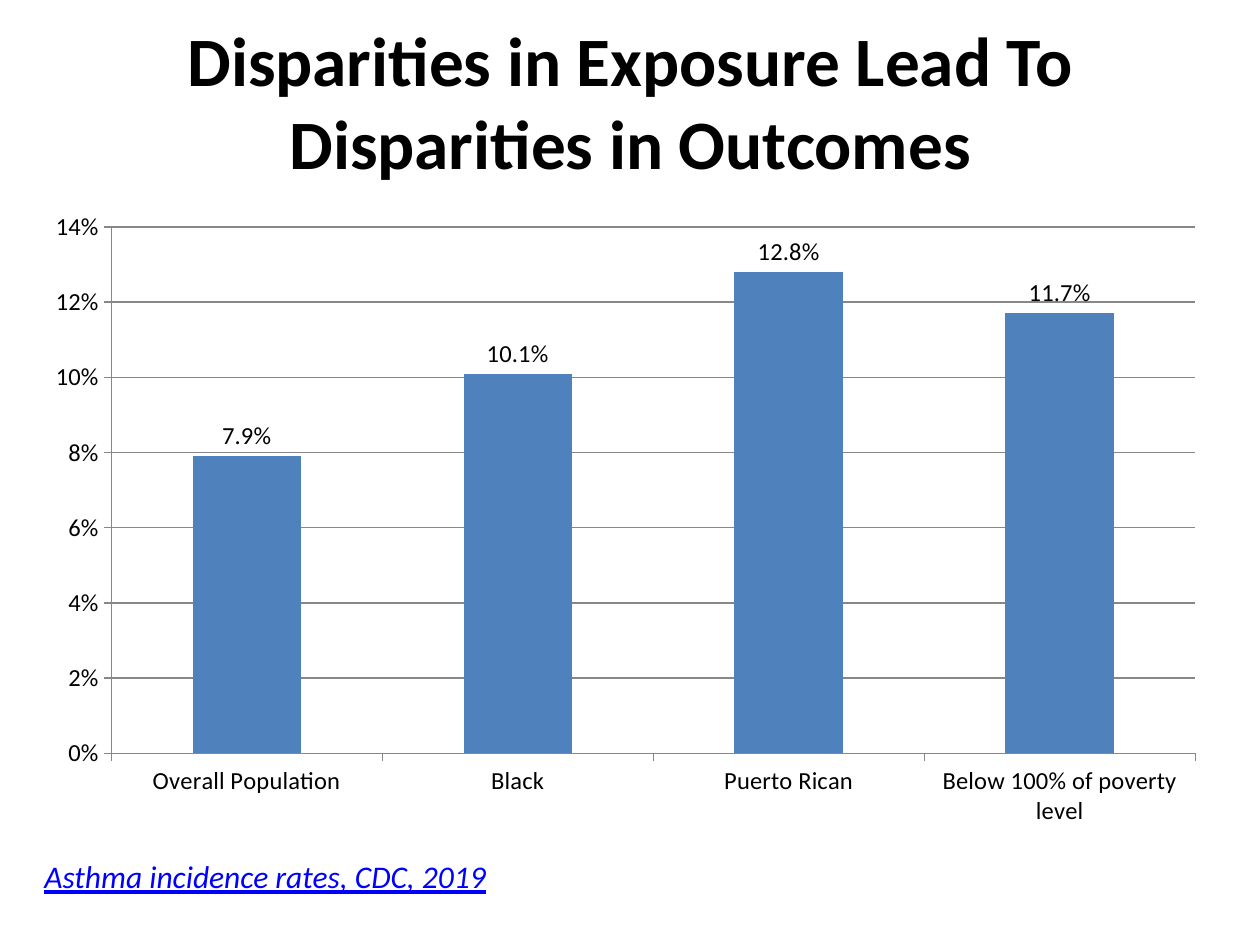
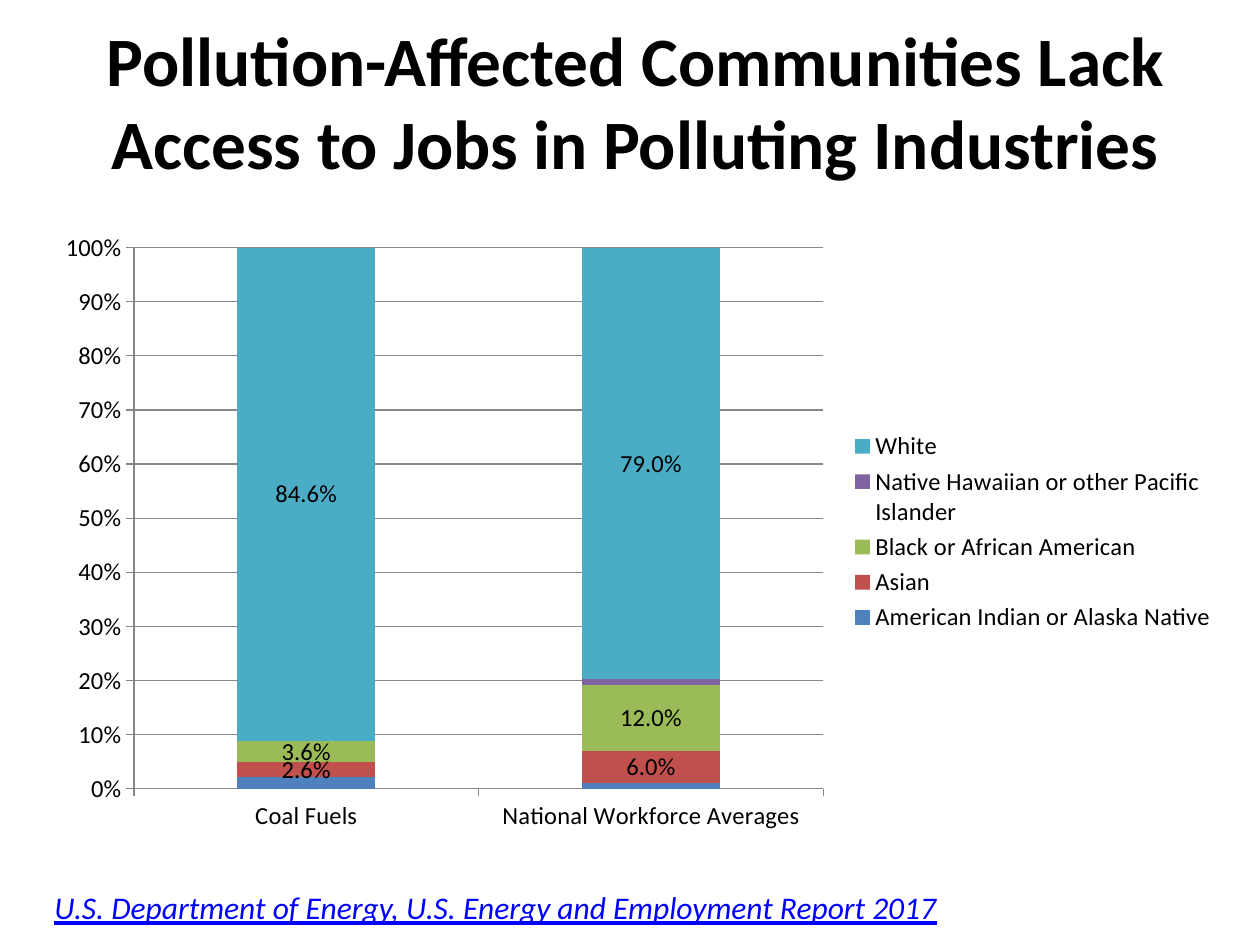
from pptx import Presentation
from pptx.chart.data import CategoryChartData
from pptx.dml.color import RGBColor
from pptx.enum.chart import XL_CHART_TYPE, XL_LABEL_POSITION, XL_LEGEND_POSITION, XL_TICK_MARK
from pptx.enum.text import MSO_ANCHOR, MSO_AUTO_SIZE, PP_ALIGN
from pptx.util import Emu, Pt

PX_PER_INCH = 126
FONT = "Calibri"
BLACK = RGBColor(0x00, 0x00, 0x00)
LINK_BLUE = RGBColor(0x00, 0x00, 0xFF)
GRID_GREY = RGBColor(0x87, 0x87, 0x87)
BLUE = RGBColor(0x4F, 0x81, 0xBD)
RED = RGBColor(0xC0, 0x50, 0x4D)
GREEN = RGBColor(0x9B, 0xBB, 0x59)
PURPLE = RGBColor(0x80, 0x64, 0xA2)
TEAL = RGBColor(0x4B, 0xAC, 0xC6)


def px(length):
    """Turn whole pixels into EMU."""
    return Emu(round(length * 914400 / PX_PER_INCH))


def style_font(font, size, color=BLACK, bold=False, italic=False):
    """Apply the shared typeface with a size, colour and weight."""
    font.name = FONT
    font.size = Pt(size)
    font.color.rgb = color
    font.bold = bold
    font.italic = italic


def set_title(page, box, text):
    """Place and format the title placeholder in the box."""
    title = page.shapes.title
    title.left, title.top, title.width, title.height = map(px, box)
    frame = title.text_frame
    frame.word_wrap = True
    frame.auto_size = MSO_AUTO_SIZE.NONE
    frame.vertical_anchor = MSO_ANCHOR.MIDDLE
    para = frame.paragraphs[0]
    para.alignment = PP_ALIGN.CENTER
    span = para.add_run()
    span.text = text
    style_font(span.font, 39.6, bold=True)


def add_source(page, box, text):
    """Add the underlined source line in the box."""
    frame = page.shapes.add_textbox(*map(px, box)).text_frame
    frame.word_wrap = True
    frame.auto_size = MSO_AUTO_SIZE.SHAPE_TO_FIT_TEXT
    span = frame.paragraphs[0].add_run()
    span.text = text
    style_font(span.font, 18, LINK_BLUE, italic=True)
    span.font.underline = True


def style_axis(axis):
    """Give an axis its text, line and tick marks."""
    style_font(axis.tick_labels.font, 14)
    axis.format.line.color.rgb = GRID_GREY
    axis.major_tick_mark = XL_TICK_MARK.OUTSIDE
    axis.minor_tick_mark = XL_TICK_MARK.NONE


def add_labels(series, position):
    """Show the values of a series as percentages."""
    labels = series.data_labels
    labels.show_value = True
    labels.number_format = "0.0%"
    labels.number_format_is_linked = False
    labels.position = position
    style_font(labels.font, 14)


def add_column_chart(page, box, kind, categories, groups, top, step, label_position):
    """Add a column chart of (name, values, colour, labelled) groups in the box."""
    data = CategoryChartData(number_format="0.0%")
    data.categories = categories
    for name, values, _, _ in groups:
        data.add_series(name, values)
    chart = page.shapes.add_chart(kind, *map(px, box), data).chart
    style_font(chart.font, 10)
    chart.has_title = False
    chart.has_legend = False
    style_axis(chart.category_axis)
    scale = chart.value_axis
    style_axis(scale)
    scale.minimum_scale, scale.maximum_scale, scale.major_unit = 0, top, step
    scale.tick_labels.number_format = "0%"
    scale.tick_labels.number_format_is_linked = False
    scale.has_major_gridlines = True
    scale.major_gridlines.format.line.color.rgb = GRID_GREY
    plot = chart.plots[0]
    plot.gap_width = 150
    plot.vary_by_categories = False
    for series, (_, _, color, labelled) in zip(plot.series, groups):
        series.format.fill.solid()
        series.format.fill.fore_color.rgb = color
        if labelled:
            add_labels(series, label_position)
    return chart


def build_outcomes(page):
    """Build the slide on asthma rates by group."""
    set_title(page, (32, 21, 1197, 158), "Disparities in Exposure Lead To Disparities in Outcomes")
    categories = ["Overall Population", "Black", "Puerto Rican", "Below 100% of poverty level"]
    rates = [("Series 1", (0.079, 0.101, 0.128, 0.117), BLUE, True)]
    add_column_chart(page, (32, 199, 1187, 640), XL_CHART_TYPE.COLUMN_CLUSTERED, categories,
                     rates, 0.14, 0.02, XL_LABEL_POSITION.OUTSIDE_END)
    add_source(page, (32, 851, 1207, 50), "Asthma incidence rates, CDC, 2019")


def build_jobs(page):
    """Build the slide on the make-up of the workforce."""
    set_title(page, (42, 21, 1187, 158),
              "Pollution-Affected Communities Lack Access to Jobs in Polluting Industries")
    shares = [
        ("American Indian or Alaska Native", (0.02, 0.01), BLUE, False),
        ("Asian", (0.026, 0.06), RED, True),
        ("Black or African American", (0.036, 0.12), GREEN, True),
        ("Native Hawaiian or other Pacific Islander", (0, 0.01), PURPLE, False),
        ("White", (0.846, 0.79), TEAL, True),
    ]
    chart = add_column_chart(page, (42, 220, 1187, 624), XL_CHART_TYPE.COLUMN_STACKED_100,
                             ["Coal Fuels", "National Workforce Averages"],
                             shares, 1, 0.1, XL_LABEL_POSITION.CENTER)
    chart.plots[0].overlap = 100
    chart.has_legend = True
    chart.legend.position = XL_LEGEND_POSITION.RIGHT
    chart.legend.include_in_layout = False
    style_font(chart.legend.font, 14)
    add_source(page, (42, 882, 1187, 50),
               "U.S. Department of Energy, U.S. Energy and Employment Report 2017")


def main():
    """Build and save the deck."""
    deck = Presentation()
    deck.slide_width, deck.slide_height = px(1260), px(945)
    title_only = deck.slide_layouts.get_by_name("Title Only")
    for build in (build_outcomes, build_jobs):
        build(deck.slides.add_slide(title_only))
    deck.save("out.pptx")


if __name__ == "__main__":
    main()
